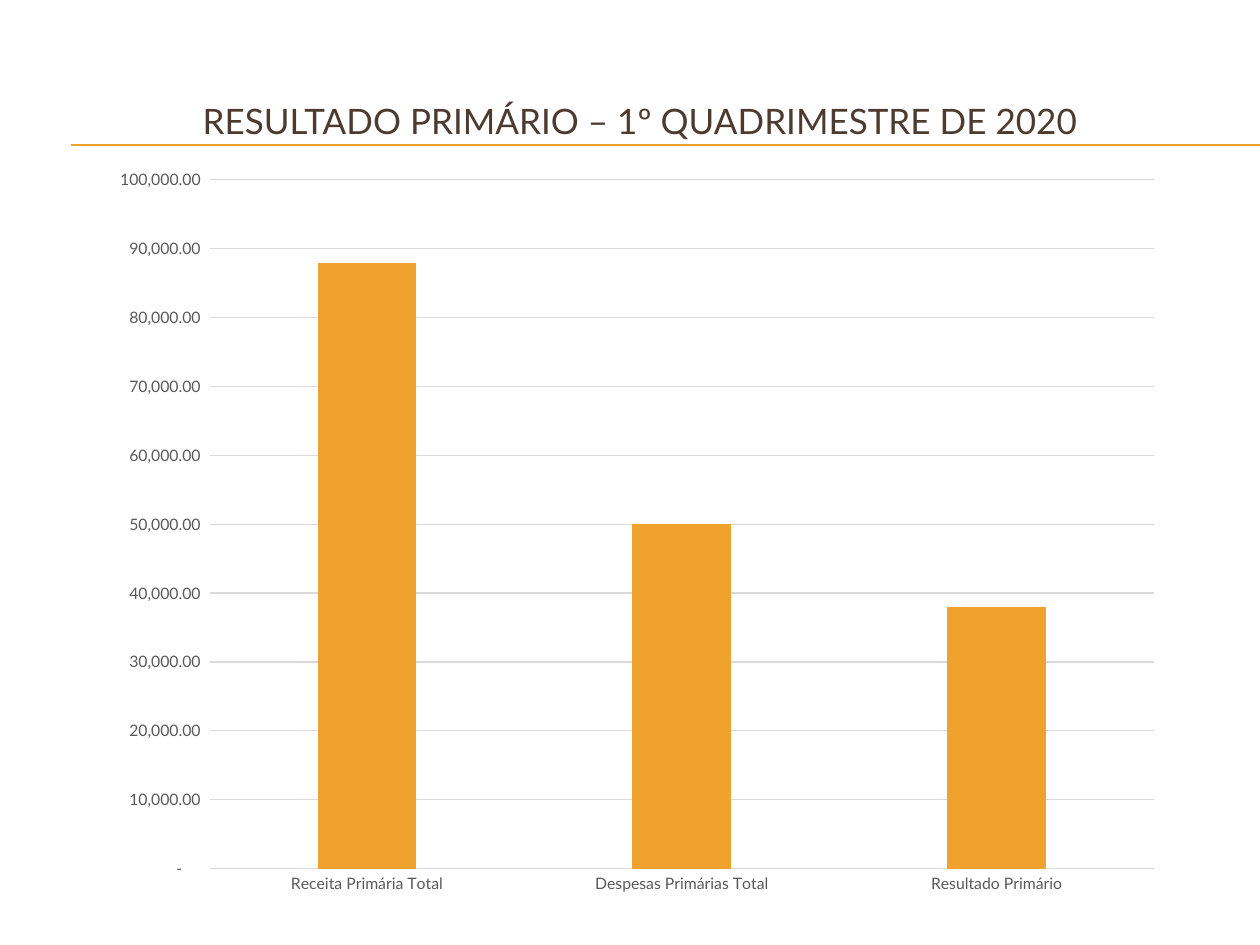
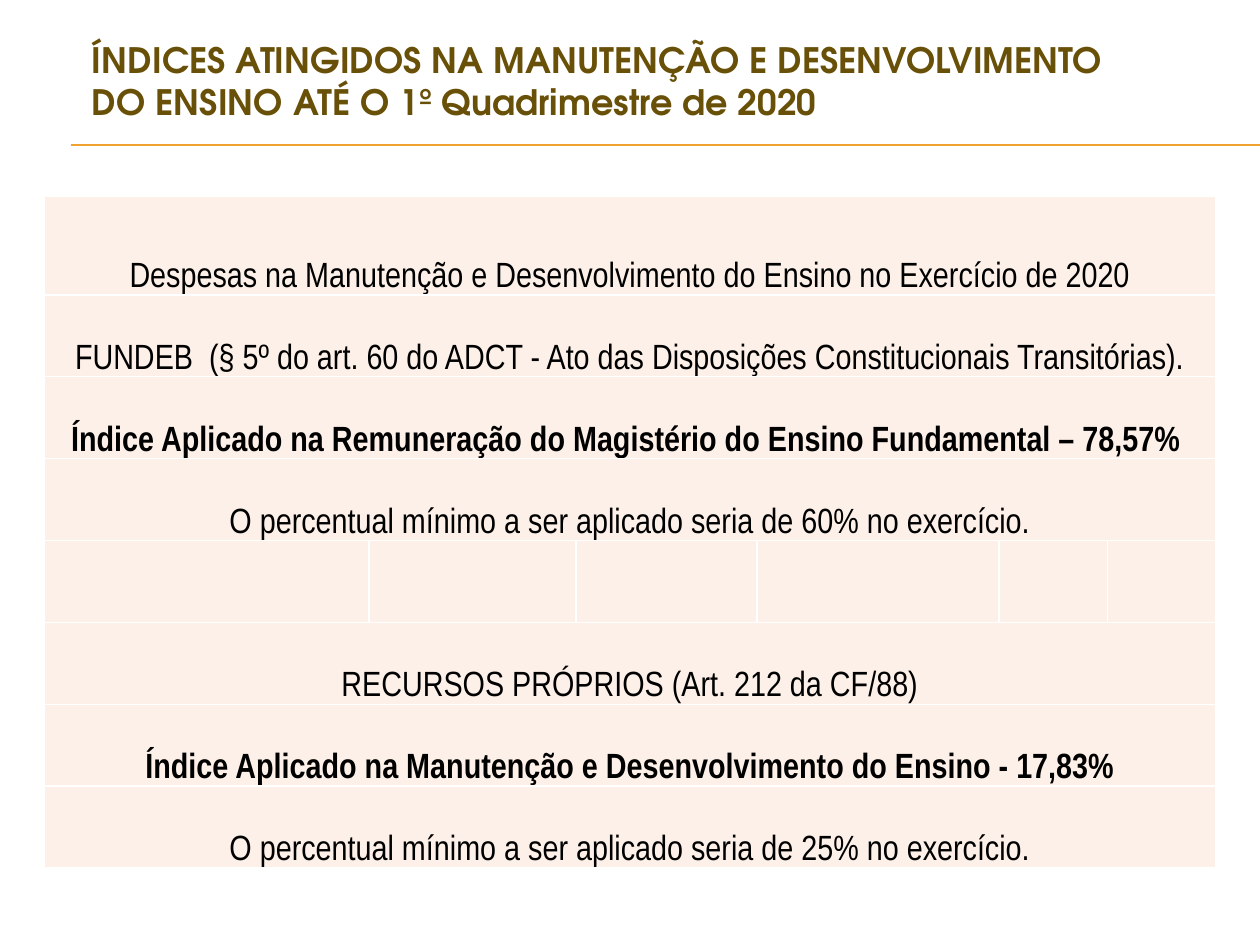
from dataclasses import dataclass
from typing import Any, NamedTuple

from lxml import etree
from pptx import Presentation
from pptx.chart.data import CategoryChartData
from pptx.dml.color import RGBColor
from pptx.enum.chart import XL_CHART_TYPE, XL_TICK_MARK
from pptx.enum.shapes import MSO_CONNECTOR
from pptx.enum.text import MSO_ANCHOR, MSO_AUTO_SIZE, PP_ALIGN
from pptx.oxml.ns import qn
from pptx.util import Inches, Pt

COLUMN = XL_CHART_TYPE.COLUMN_CLUSTERED
NO_TICK = XL_TICK_MARK.NONE
STRAIGHT = MSO_CONNECTOR.STRAIGHT
MIDDLE, BOTTOM = MSO_ANCHOR.MIDDLE, MSO_ANCHOR.BOTTOM
NO_AUTOFIT = MSO_AUTO_SIZE.NONE
LEFT, CENTER = PP_ALIGN.LEFT, PP_ALIGN.CENTER
TITLE_ONLY = 5


class TextStyle(NamedTuple):
    font: str
    size: float
    color: str
    bold: bool = False


@dataclass(frozen=True)
class Theme:
    accent: str = "F0A22E"
    grid: str = "D9D9D9"
    cell: str = "FCF0E8"
    border: str = "FFFFFF"
    line_width: float = 0.75
    border_width: float = 1
    result_title: TextStyle = TextStyle("Lato", 20, "4E3B30")
    index_title: TextStyle = TextStyle("TeX Gyre Adventor", 20, "695008", True)
    axis: TextStyle = TextStyle("Lato", 9, "595959")
    body: TextStyle = TextStyle("Arial Narrow", 20, "000000")
    body_bold: TextStyle = TextStyle("Arial Narrow", 20, "000000", True)


THEME = Theme()


class Box(NamedTuple):
    left: float
    top: float
    width: float
    height: float

    def lengths(self) -> list[int]:
        return [Inches(value) for value in self]


class Insets(NamedTuple):
    left: float
    top: float
    right: float
    bottom: float

    def margins(self) -> dict[str, int]:
        return {f"margin_{side}": Inches(value) for side, value in self._asdict().items()}


class Title(NamedTuple):
    text: str
    box: Box
    style: TextStyle
    align: Any
    insets: Insets


class IndexRow(NamedTuple):
    text: str = ""
    bold: bool = False


RESULT_TITLE = Title(
    "RESULTADO PRIMÁRIO – 1º QUADRIMESTRE DE 2020",
    Box(0.33, 0.5, 9.5, 0.92), THEME.result_title, CENTER, Insets(0.1, 0.05, 0.1, 0.05),
)
INDEX_TITLE = Title(
    "ÍNDICES ATINGIDOS NA MANUTENÇÃO E DESENVOLVIMENTO DO ENSINO "
    "ATÉ O 1º Quadrimestre de 2020",
    Box(0.62, 0, 8.67, 1.57), THEME.index_title, LEFT, Insets(0.11, 0.05, 0.3, 0.35),
)
RULE_LEFT, RULE_RIGHT = 0.56, 10
RULE_HEIGHTS = (1.15, 1.15)

RESULT_BOX = Box(0.75, 1.23, 8.58, 5.98)
RESULTS = {
    "Receita Primária Total": 88000,
    "Despesas Primárias Total": 50000,
    "Resultado Primário": 38000,
}
AMOUNT_FORMAT = '_(* #,##0.00_);_(* \\(#,##0.00\\);_(* "-"??_);_(@_)'

INDEX_BOX = Box(0.35, 1.56, 9.3, 5.33)
INDEX_COLUMNS = (2.58, 1.64, 1.44, 1.92, 0.86, 0.86)
FIRST_ROW_HEIGHT, ROW_HEIGHT = 0.78, 0.65
CELL_INSETS = Insets(0.01, 0.01, 0.01, 0)
INDEX_ROWS = (
    IndexRow("Despesas na Manutenção e Desenvolvimento do Ensino no Exercício de 2020"),
    IndexRow("FUNDEB  (§ 5º do art. 60 do ADCT - Ato das Disposições Constitucionais Transitórias)."),
    IndexRow("Índice Aplicado na Remuneração do Magistério do Ensino Fundamental – 78,57% ", True),
    IndexRow("O percentual mínimo a ser aplicado seria de 60% no exercício."),
    IndexRow(),
    IndexRow("RECURSOS PRÓPRIOS (Art. 212 da CF/88)"),
    IndexRow("Índice Aplicado na Manutenção e Desenvolvimento do Ensino - 17,83%", True),
    IndexRow("O percentual mínimo a ser aplicado seria de 25% no exercício."),
)


def apply(target: Any, values: dict[str, Any]) -> None:
    for name, value in values.items():
        setattr(target, name, value)


def format_font(font: Any, style: TextStyle) -> None:
    apply(font, {"name": style.font, "size": Pt(style.size), "bold": style.bold})
    font.color.rgb = RGBColor.from_string(style.color)


def format_line(line: Any, color: str) -> None:
    line.color.rgb = RGBColor.from_string(color)
    line.width = Pt(THEME.line_width)


def fill_solid(fill: Any, color: str) -> None:
    fill.solid()
    fill.fore_color.rgb = RGBColor.from_string(color)


def write(frame: Any, text: str, style: TextStyle, align: Any) -> None:
    paragraph = frame.paragraphs[0]
    paragraph.alignment = align
    run = paragraph.add_run()
    run.text = text
    format_font(run.font, style)


def draw_rules(slide: Any) -> None:
    for height in RULE_HEIGHTS:
        rule = slide.shapes.add_connector(
            STRAIGHT, Inches(RULE_LEFT), Inches(height), Inches(RULE_RIGHT), Inches(height)
        )
        format_line(rule.line, THEME.accent)
        etree.SubElement(rule._element.spPr, qn("a:effectLst"))


def add_titled_slide(deck: Any, title: Title) -> Any:
    slide = deck.slides.add_slide(deck.slide_layouts[TITLE_ONLY])
    draw_rules(slide)
    heading = slide.shapes.title
    apply(heading, dict(zip(Box._fields, title.box.lengths())))
    apply(heading.text_frame, {
        "word_wrap": True,
        "auto_size": NO_AUTOFIT,
        "vertical_anchor": MIDDLE,
        **title.insets.margins(),
    })
    write(heading.text_frame, title.text, title.style, title.align)
    return slide


def draw_results(slide: Any) -> None:
    data = CategoryChartData()
    data.categories = list(RESULTS)
    data.add_series("Series 1", list(RESULTS.values()))
    chart = slide.shapes.add_chart(COLUMN, *RESULT_BOX.lengths(), data).chart
    apply(chart, {"has_legend": False, "has_title": False})
    format_font(chart.font, THEME.axis)

    columns = chart.plots[0]
    apply(columns, {"gap_width": 219, "overlap": -27, "vary_by_categories": False})
    fill_solid(columns.series[0].format.fill, THEME.accent)

    for axis in (chart.category_axis, chart.value_axis):
        apply(axis, {"major_tick_mark": NO_TICK, "minor_tick_mark": NO_TICK})
        format_font(axis.tick_labels.font, THEME.axis)
    format_line(chart.category_axis.format.line, THEME.grid)

    amounts = chart.value_axis
    apply(amounts, {"minimum_scale": 0, "maximum_scale": 100000, "major_unit": 10000})
    apply(amounts.tick_labels, {"number_format": AMOUNT_FORMAT, "number_format_is_linked": False})
    amounts.format.line.fill.background()
    format_line(amounts.major_gridlines.format.line, THEME.grid)


def draw_borders(cell: Any) -> None:
    properties = cell._tc.get_or_add_tcPr()
    for position, side in enumerate(("lnL", "lnR", "lnT", "lnB")):
        border = etree.Element(qn(f"a:{side}"), w=str(Pt(THEME.border_width)))
        solid = etree.SubElement(border, qn("a:solidFill"))
        etree.SubElement(solid, qn("a:srgbClr"), val=THEME.border)
        properties.insert(position, border)


def draw_indices(slide: Any) -> None:
    table = slide.shapes.add_table(
        len(INDEX_ROWS), len(INDEX_COLUMNS), *INDEX_BOX.lengths()
    ).table
    apply(table, {"first_row": False, "horz_banding": False})
    for column, width in zip(table.columns, INDEX_COLUMNS):
        column.width = Inches(width)

    for number, entry in enumerate(INDEX_ROWS):
        row = table.rows[number]
        row.height = Inches(ROW_HEIGHT if number else FIRST_ROW_HEIGHT)
        for cell in row.cells:
            apply(cell, {"vertical_anchor": BOTTOM, **CELL_INSETS.margins()})
            fill_solid(cell.fill, THEME.cell)
            draw_borders(cell)
        if entry.text:
            first = table.cell(number, 0)
            first.merge(table.cell(number, len(INDEX_COLUMNS) - 1))
            style = THEME.body_bold if entry.bold else THEME.body
            write(first.text_frame, entry.text, style, CENTER)


def main() -> None:
    deck = Presentation()
    apply(deck, {"slide_width": Inches(10), "slide_height": Inches(7.5)})
    draw_results(add_titled_slide(deck, RESULT_TITLE))
    draw_indices(add_titled_slide(deck, INDEX_TITLE))
    deck.save("out.pptx")


if __name__ == "__main__":
    main()
